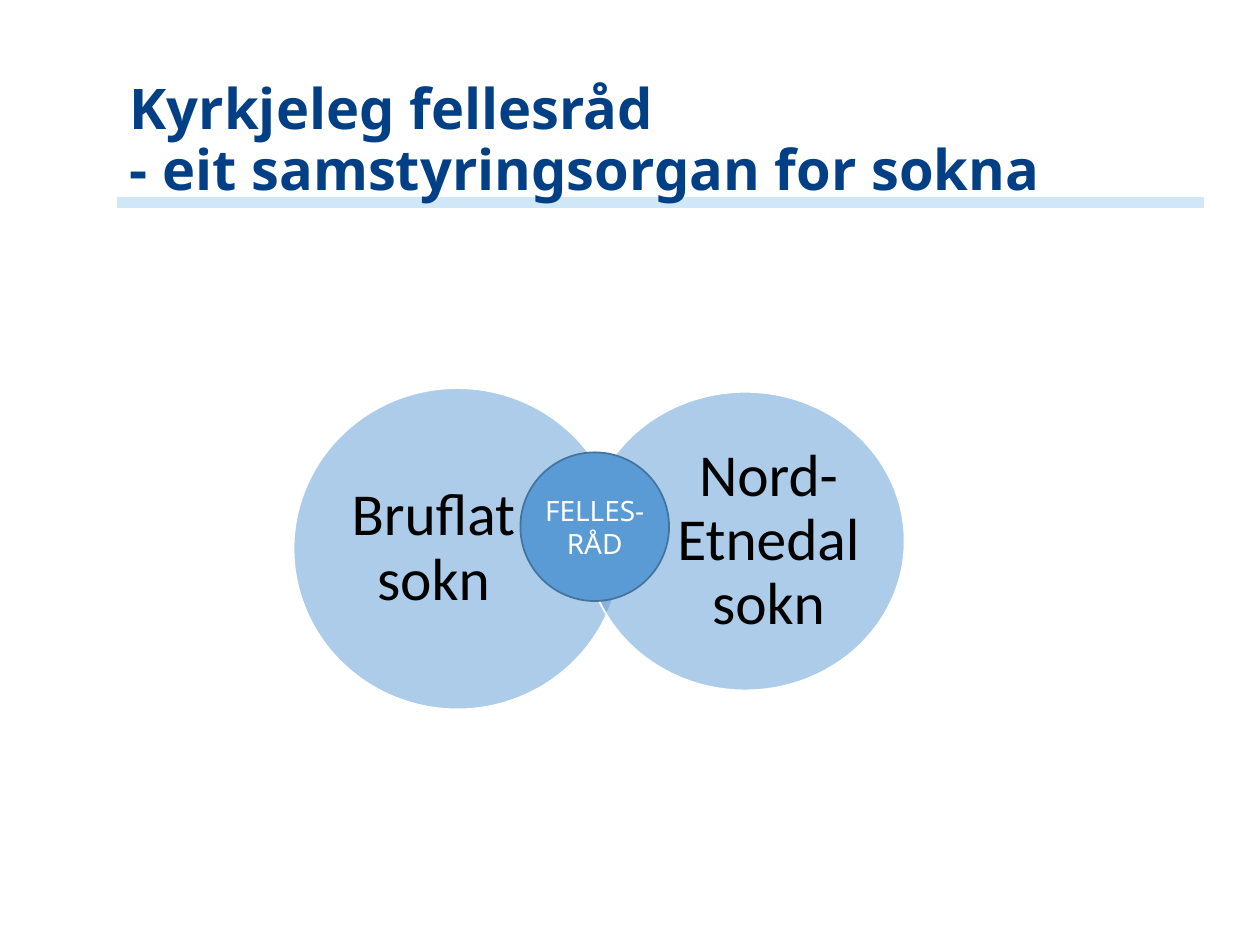
from lxml.etree import SubElement
from pptx import Presentation
from pptx.dml.color import RGBColor
from pptx.enum.shapes import MSO_SHAPE
from pptx.enum.text import MSO_ANCHOR, MSO_AUTO_SIZE, PP_ALIGN
from pptx.oxml.ns import qn
from pptx.util import Inches, Pt


def color(code):
    return RGBColor.from_string(code)


class Deck:
    head = "Noto Sans"
    body = "Calibri"
    navy = "023F84"
    pale = "D0E7F8"
    blue = "5B9BD5"
    edge = "43739E"
    white = "FFFFFF"
    black = "000000"

    def __init__(self, slide):
        self.slide = slide

    def add_runs(self, para, lines, font, size, tint, bold=False):
        for i, line in enumerate(lines):
            if i:
                para.add_line_break()
            run = para.add_run()
            run.text = line
            run.font.name = font
            run.font.size = Pt(size)
            run.font.bold = bold
            run.font.color.rgb = color(tint)

    def title(self, box, lines):
        shape = self.slide.shapes.title
        shape.left, shape.top, shape.width, shape.height = map(Inches, box)
        frame = shape.text_frame
        frame.auto_size = MSO_AUTO_SIZE.NONE
        frame.vertical_anchor = MSO_ANCHOR.MIDDLE
        para = frame.paragraphs[0]
        para.alignment = PP_ALIGN.LEFT
        para.line_spacing = 0.9
        self.add_runs(para, lines, self.head, 32, self.navy, True)
        return shape

    def shape(self, kind, box, fill, line, width=1, alpha=None):
        shape = self.slide.shapes.add_shape(kind, *map(Inches, box))
        shape.shadow.inherit = False
        shape.fill.solid()
        shape.fill.fore_color.rgb = color(fill)
        shape.line.color.rgb = color(line)
        shape.line.width = Pt(width)
        if alpha is not None:
            tone = shape.element.spPr.find(qn("a:solidFill"))[0]
            SubElement(tone, qn("a:alpha"), val=str(alpha * 1000))
        return shape

    def label(self, frame, text, font, size, tint, gap=1.0):
        frame.word_wrap = True
        frame.vertical_anchor = MSO_ANCHOR.MIDDLE
        frame.margin_left = frame.margin_right = 0
        frame.margin_top = frame.margin_bottom = 0
        para = frame.paragraphs[0]
        para.alignment = PP_ALIGN.CENTER
        para.line_spacing = gap
        self.add_runs(para, [text], font, size, tint)

    def parish(self, oval, box, text):
        self.shape(MSO_SHAPE.OVAL, oval, self.blue, self.white, alpha=50)
        note = self.slide.shapes.add_textbox(*map(Inches, box))
        self.label(note.text_frame, text, self.body, 34, self.black, 0.9)

    def council(self, box, text):
        disc = self.shape(MSO_SHAPE.OVAL, box, self.blue, self.edge)
        self.label(disc.text_frame, text, self.head, 16, self.white)


def main():
    prs = Presentation()
    prs.slide_width, prs.slide_height = Inches(10), Inches(7.5)
    deck = Deck(prs.slides.add_slide(prs.slide_layouts[5]))

    # Title, with the pale rule behind it
    title = deck.title((0.93, 0.4, 8.62, 1.45),
                       ["Kyrkjeleg fellesråd", "- eit samstyringsorgan for sokna"])
    rule = deck.shape(MSO_SHAPE.RECTANGLE, (0.93, 1.57, 8.62, 0.08),
                      deck.pale, deck.pale, 0.5)
    title.element.addprevious(rule.element)

    # Two overlapping parishes
    deck.parish((2.33, 3.08, 2.6, 2.55), (2.69, 3.38, 1.5, 1.95), "Bruflat sokn")
    deck.parish((4.65, 3.11, 2.53, 2.37), (5.37, 3.39, 1.46, 1.81),
                "Nord- Etnedal sokn")

    # Joint council where they meet
    deck.council((4.13, 3.59, 1.18, 1.18), "FELLES-RÅD")

    prs.save("out.pptx")


if __name__ == "__main__":
    main()
